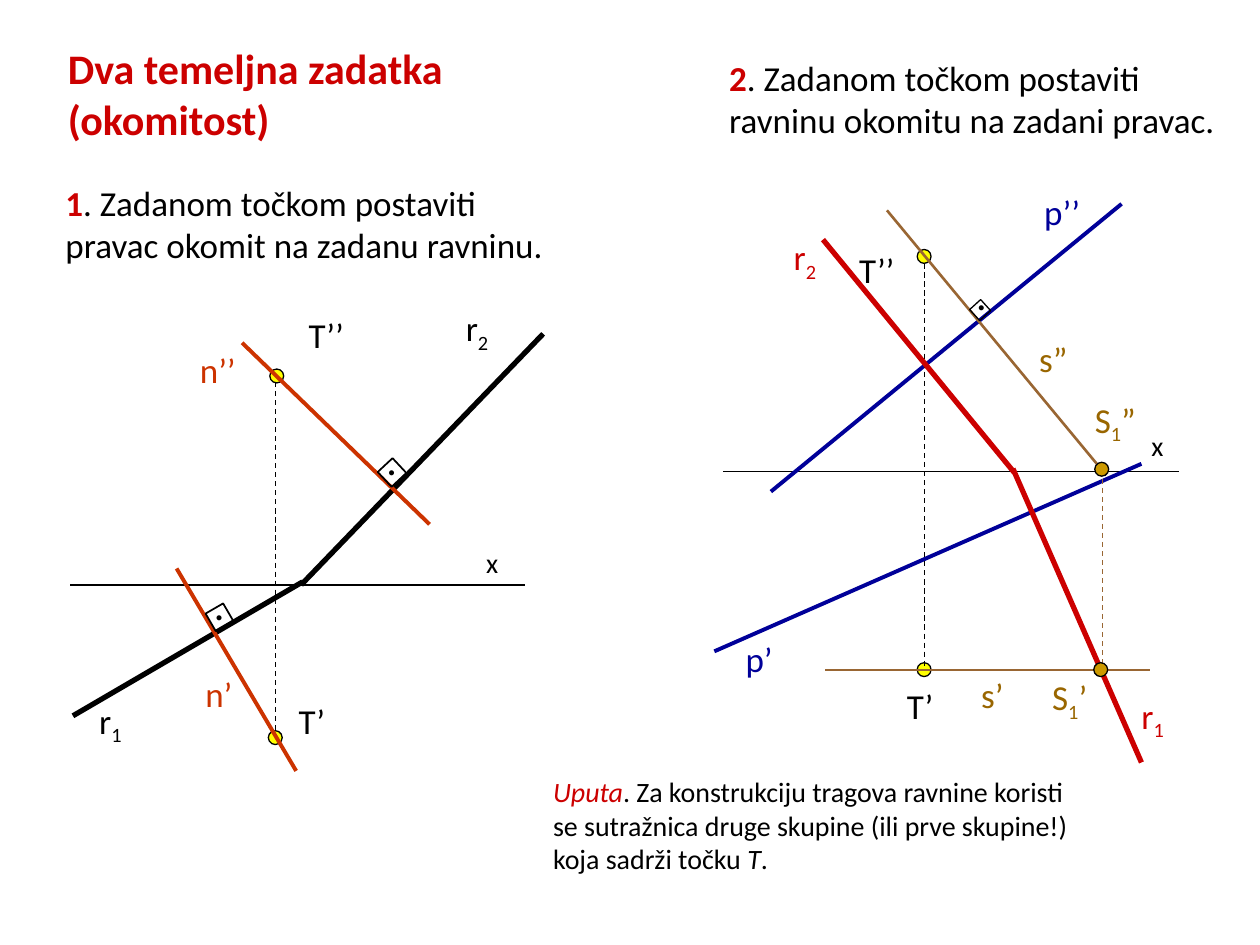
from lxml import etree
from pptx import Presentation
from pptx.dml.color import RGBColor
from pptx.enum.dml import MSO_LINE
from pptx.enum.shapes import MSO_CONNECTOR, MSO_SHAPE
from pptx.oxml.ns import qn
from pptx.util import Cm, Pt

STRAIGHT = MSO_CONNECTOR.STRAIGHT
OVAL = MSO_SHAPE.OVAL
RECTANGLE = MSO_SHAPE.RECTANGLE
DASH = MSO_LINE.DASH

BLACK = RGBColor(0x00, 0x00, 0x00)
RED = RGBColor(0xCC, 0x00, 0x00)
ORANGE = RGBColor(0xCC, 0x33, 0x00)
BLUE = RGBColor(0x00, 0x00, 0x99)
BROWN = RGBColor(0x99, 0x66, 0x33)
OCHRE = RGBColor(0x99, 0x66, 0x00)
YELLOW = RGBColor(0xFF, 0xFF, 0x00)
GOLD = RGBColor(0xCC, 0x99, 0x00)

prs = Presentation()
prs.slide_width = Cm(25.4)
prs.slide_height = Cm(19.05)
s = prs.slides.add_slide(prs.slide_layouts[6])


def add_text(left, top, width, height, size, color, runs):
    tf = s.shapes.add_textbox(Cm(left), Cm(top), Cm(width), Cm(height)).text_frame
    tf.word_wrap = True
    p = tf.paragraphs[0]
    p.font.name = "Calibri"
    p.font.size = Pt(size)
    p.font.color.rgb = color
    for text, style in runs:
        r = p.add_run()
        r.text = text
        if "bold" in style:
            r.font.bold = True
        if "italic" in style:
            r.font.italic = True
        if "red" in style:
            r.font.color.rgb = RED
        if "sub" in style:
            r.font._element.set("baseline", "-25000")


def add_lines(lines):
    for x1, y1, x2, y2, color, weight, dash in lines:
        c = s.shapes.add_connector(STRAIGHT, Cm(x1), Cm(y1), Cm(x2), Cm(y2))
        c.line.color.rgb = color
        c.line.width = Pt(weight)
        if dash:
            c.line.dash_style = dash
        etree.SubElement(c._element.spPr, qn("a:effectLst"))


add_text(1.12, 0.74, 10.19, 1.19, 24, RED, [("Dva temeljna zadatka (okomitost)", "bold")])
add_text(1.07, 3.53, 10.44, 1.96, 20, BLACK, [
    ("1", "bold red"),
    (". Zadanom točkom postaviti pravac okomit na zadanu ravninu.", ""),
])
add_text(14.45, 1.02, 10.36, 1.96, 20, BLACK, [
    ("2", "bold red"),
    (". Zadanom točkom postaviti ravninu okomitu na zadani pravac.", ""),
])
add_text(10.9, 15.49, 11.28, 2.29, 16, BLACK, [
    ("Uputa", "italic red"),
    (". Za konstrukciju tragova ravnine koristi se sutražnica druge skupine "
     "(ili prve skupine!) koja sadrži točku ", ""),
    ("T", "italic"),
    (".", ""),
])

add_lines([
    (1.42, 11.79, 10.59, 11.79, BLACK, 0.75, None),
    (10.95, 6.73, 6.07, 11.79, BLACK, 3, None),
    (6.1, 11.73, 1.47, 14.43, BLACK, 3, None),
    (14.58, 9.5, 23.77, 9.5, BLACK, 0.75, None),
    (22.61, 4.11, 15.54, 9.91, BLUE, 2.25, None),
    (23.01, 9.35, 14.4, 13.13, BLUE, 2.25, None),
])

for left, top in [(5.44, 7.44), (5.41, 14.73), (18.49, 5.03), (18.49, 13.36)]:
    sp = s.shapes.add_shape(OVAL, Cm(left), Cm(top), Cm(0.28), Cm(0.28))
    sp.shadow.inherit = False
    sp.fill.solid()
    sp.fill.fore_color.rgb = YELLOW
    sp.line.color.rgb = BLACK
    sp.line.width = Pt(0.75)

add_lines([
    (5.56, 7.7, 5.56, 14.76, BLACK, 0.75, DASH),
    (18.64, 5.31, 18.64, 13.44, BLACK, 0.75, DASH),
    (23.01, 15.37, 20.42, 9.45, RED, 3, None),
    (16.59, 4.83, 20.45, 9.53, RED, 3, None),
    (4.88, 6.91, 8.66, 10.57, ORANGE, 2.25, None),
    (5.97, 15.54, 3.56, 11.46, ORANGE, 2.25, None),
    (17.88, 4.24, 22.3, 9.58, BROWN, 1.5, None),
    (16.64, 13.51, 23.19, 13.51, BROWN, 1.5, None),
    (22.23, 9.47, 22.23, 13.54, BROWN, 0.75, DASH),
])

for left, top in [(22.07, 9.32), (22.05, 13.36)]:
    sp = s.shapes.add_shape(OVAL, Cm(left), Cm(top), Cm(0.28), Cm(0.28))
    sp.shadow.inherit = False
    sp.fill.solid()
    sp.fill.fore_color.rgb = GOLD
    sp.line.color.rgb = BLACK
    sp.line.width = Pt(0.75)

right_angles = [
    (7.7, 9.32, 0.41, 317, 1, 7.54, 8.61, 0.61),
    (4.22, 12.24, 0.41, 329.9, 1, 4.06, 11.53, 0.61),
    (19.61, 6.1, 0.3, 317.8, 0.75, 19.43, 5.28, 0.71),
]
for left, top, side, angle, weight, dot_left, dot_top, dot_width in right_angles:
    sp = s.shapes.add_shape(RECTANGLE, Cm(left), Cm(top), Cm(side), Cm(side))
    sp.shadow.inherit = False
    sp.rotation = angle
    sp.fill.background()
    sp.line.color.rgb = BLACK
    sp.line.width = Pt(weight)
    add_text(dot_left, dot_top, dot_width, 1.27, 24, BLACK, [(".", "")])

for left, top, width in [(9.55, 10.87, 1.12), (22.96, 8.51, 0.84)]:
    add_text(left, top, width, 0.94, 16, BLACK, [("x", "")])

labels = [
    (9.14, 6.05, 1.52, BLACK, "r", "2", ""),
    (1.75, 13.97, 1.45, BLACK, "r", "1", ""),
    (5.97, 6.2, 1.47, BLACK, "T’’", "", ""),
    (5.77, 13.97, 1.35, BLACK, "T’", "", ""),
    (3.78, 6.91, 1.78, ORANGE, "n’’", "", ""),
    (3.89, 13.44, 1.35, ORANGE, "n’", "", ""),
    (20.8, 3.71, 1.93, BLUE, "p’’", "", ""),
    (14.78, 12.73, 2.01, BLUE, "p’", "", ""),
    (17.07, 4.88, 1.6, BLACK, "T’’", "", ""),
    (18.03, 13.67, 1.4, BLACK, "T’", "", ""),
    (22.76, 13.87, 1.3, RED, "r", "1", ""),
    (15.75, 4.62, 1.35, RED, "r", "2", ""),
    (20.7, 6.68, 1.17, OCHRE, "s”", "", ""),
    (19.53, 13.46, 1.37, OCHRE, "s’", "", ""),
    (20.96, 13.49, 1.42, OCHRE, "S", "1", "’"),
    (21.82, 7.9, 1.52, OCHRE, "S", "1", "”"),
]
for left, top, width, color, name, index, prime in labels:
    runs = [(name, "")]
    if index:
        runs.append((index, "sub"))
    if prime:
        runs.append((prime, ""))
    add_text(left, top, width, 1.09, 20, color, runs)

prs.save("out.pptx")
